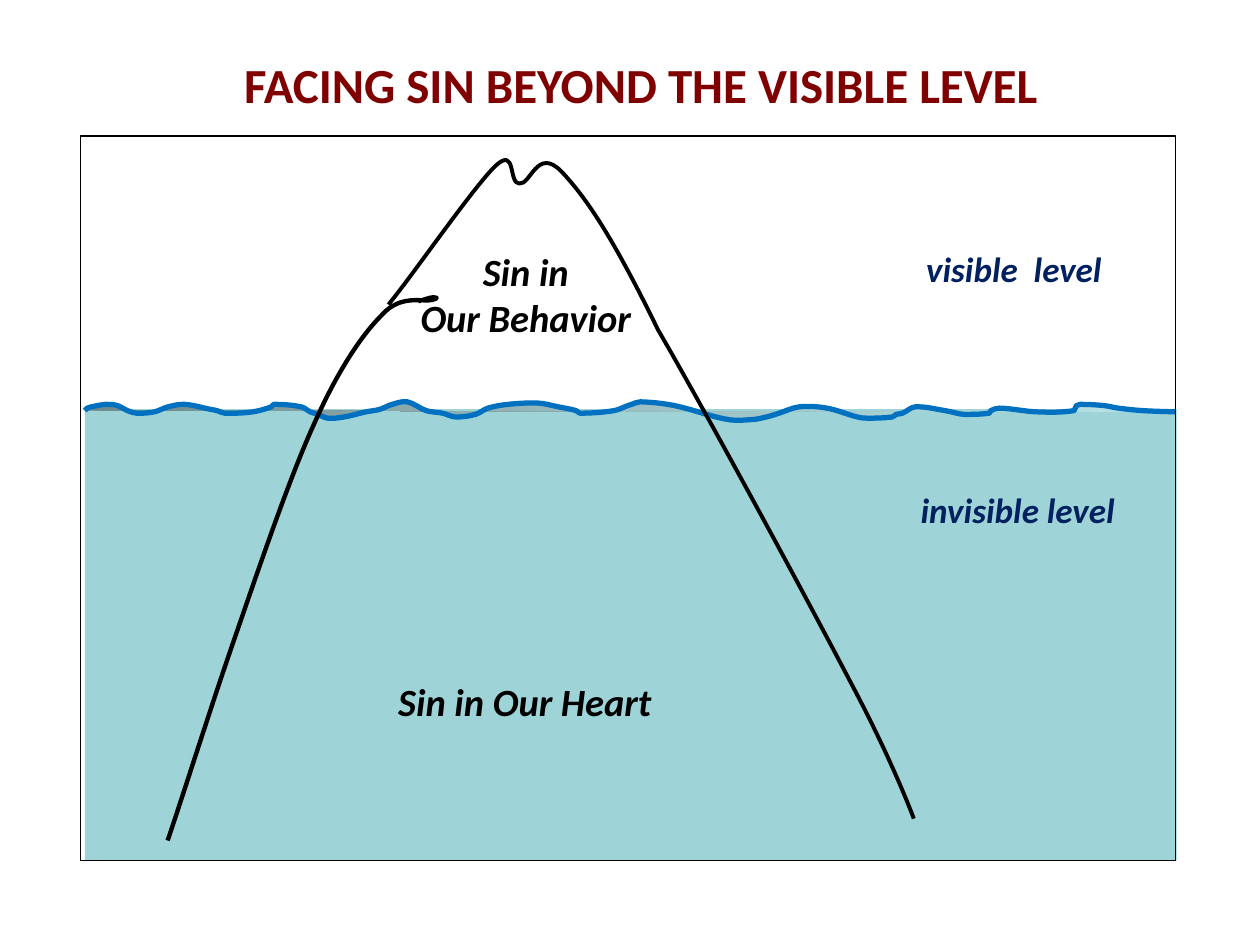
from copy import deepcopy

from pptx import Presentation
from pptx.dml.color import RGBColor
from pptx.enum.shapes import MSO_SHAPE
from pptx.enum.text import MSO_ANCHOR, PP_ALIGN
from pptx.oxml.ns import qn
from pptx.util import Cm, Pt

FONT = "Calibri"
MAROON = RGBColor(0x80, 0x00, 0x00)
NAVY = RGBColor(0x00, 0x20, 0x60)
BLACK = RGBColor(0x00, 0x00, 0x00)
WATER = RGBColor(0x9E, 0xD3, 0xD7)
WAVE_LINE = RGBColor(0x00, 0x70, 0xC0)
WAVE_STOPS = [RGBColor(0x6D, 0x86, 0x88), RGBColor(0x9B, 0xBF, 0xC2),
              RGBColor(0xB8, 0xE3, 0xE6)]

# Curve points are counted in hundredths of an inch
UNIT = Cm(2.54) / 100

WAVE_KNOTS = [
    (0, 9), (2, 7), (5, 6), (17, 4), (26, 5), (34, 9), (41, 11), (55, 10),
    (66, 6), (79, 4), (100, 8), (105, 9), (111, 11), (133, 10), (148, 6),
    (150, 4), (172, 6), (179, 10), (185, 12), (193, 15), (206, 14), (223, 10),
    (234, 8), (244, 4), (256, 2), (271, 9), (284, 11), (294, 14), (310, 12),
    (320, 7), (336, 4), (360, 3), (376, 6), (390, 9), (393, 11), (420, 9),
    (431, 5), (434, 4), (441, 2), (468, 5), (510, 16), (531, 16), (541, 14),
    (545, 13), (551, 11), (567, 6), (589, 7), (613, 14), (621, 15), (641, 14),
    (644, 12), (649, 11), (659, 6), (683, 9), (692, 11), (698, 12), (718, 11),
    (719, 9), (726, 7), (756, 10), (785, 9), (787, 5), (790, 4), (809, 5),
    (820, 7), (840, 9), (866, 10)]

# Bezier points: a start, then two handles and an end for each piece
LEFT_SLOPE = [
    (0, 434), (11, 402), (33, 332), (52, 277), (71, 222), (96, 148),
    (116, 104), (135, 61), (154, 33), (170, 17), (185, 0), (203, 7),
    (210, 5), (217, 3), (212, 3), (210, 3), (208, 3), (200, 6), (199, 6)]
PEAK_AND_RIGHT_SLOPE = [
    (0, 126), (17, 106), (68, 32), (85, 16), (102, 0), (95, 30), (104, 30),
    (113, 31), (118, 1), (137, 20), (155, 39), (176, 68), (214, 146),
    (253, 213), (333, 361), (367, 426), (401, 490), (417, 534), (417, 534)]


def smooth_points(knots):
    """Bezier points of a curve that runs left to right through the knots."""
    before = knots[:1] + knots[:-1]
    after = knots[1:] + knots[-1:]
    slopes = [(y2 - y1) / (x2 - x1) for (x1, y1), (x2, y2) in zip(before, after)]
    points = [knots[0]]
    for i in range(len(knots) - 1):
        (x1, y1), (x2, y2) = knots[i], knots[i + 1]
        third = (x2 - x1) / 3
        points += [(x1 + third, y1 + slopes[i] * third),
                   (x2 - third, y2 - slopes[i + 1] * third), (x2, y2)]
    return points


def add_curve(shapes, left, top, points, color, width):
    scaled = [(x * UNIT, y * UNIT) for x, y in points]
    builder = shapes.build_freeform(*scaled[0])
    builder.add_line_segments(scaled[1:], close=False)
    shape = builder.convert_to_shape(left, top)
    # Join each three line segments into one cubic piece
    segments = list(shape._element.iter(qn("a:lnTo")))
    for first, second, third in zip(*[iter(segments)] * 3):
        first.tag = qn("a:cubicBezTo")
        for segment in (second, third):
            first.append(segment[0])
            segment.getparent().remove(segment)
    shape.shadow.inherit = False
    shape.fill.background()
    shape.line.color.rgb = color
    shape.line.width = Pt(width)
    return shape


def add_rectangle(shapes, left, top, width, height):
    shape = shapes.add_shape(MSO_SHAPE.RECTANGLE, left, top, width, height)
    shape.shadow.inherit = False
    shape.fill.background()
    shape.line.fill.background()
    return shape


def format_run(run, size, color, italic):
    run.font.name = FONT
    run.font.size = Pt(size)
    run.font.bold = True
    run.font.italic = italic
    run.font.color.rgb = color


def add_label(shapes, box, lines, size, color, align, margin, indent):
    text_frame = shapes.add_textbox(*box).text_frame
    text_frame.word_wrap = True
    for i, line in enumerate(lines):
        paragraph = text_frame.add_paragraph() if i else text_frame.paragraphs[0]
        paragraph.alignment = align
        properties = paragraph._p.get_or_add_pPr()
        properties.set("marL", str(Cm(margin)))
        properties.set("indent", str(Cm(indent)))
        run = paragraph.add_run()
        run.text = line
        format_run(run, size, color, True)


def add_title(slide, left, top, width, height):
    title = slide.shapes.title
    title.left, title.top, title.width, title.height = left, top, width, height
    title.text_frame.vertical_anchor = MSO_ANCHOR.MIDDLE
    paragraph = title.text_frame.paragraphs[0]
    paragraph.alignment = PP_ALIGN.CENTER
    run = paragraph.add_run()
    run.text = "FACING SIN BEYOND THE VISIBLE LEVEL"
    format_run(run, 28, MAROON, False)


def add_sea(shapes, left, top):
    # Water body
    water = add_rectangle(shapes, left + Cm(0.08), top + Cm(5.51), Cm(22.01), Cm(9.1))
    water.fill.solid()
    water.fill.fore_color.rgb = WATER

    # Wavy surface with a three-stop gradient
    wave = add_curve(shapes, left + Cm(0.08), top + Cm(5.31),
                     smooth_points(WAVE_KNOTS), WAVE_LINE, 3)
    wave.fill.gradient()
    wave.fill.gradient_angle = 45
    stop_list = next(wave._element.iter(qn("a:gsLst")))
    stop_list.append(deepcopy(stop_list[0]))
    for i, (stop, color) in enumerate(zip(wave.fill.gradient_stops, WAVE_STOPS)):
        stop.position = i / 2
        stop.color.rgb = color


def add_labels(shapes, left, top):
    def box(x, y, width, height):
        return left + Cm(x), top + Cm(y), Cm(width), Cm(height)

    # Parts of the iceberg
    for place, lines in [(box(5.16, 2.13, 7.62, 2.11), ["Sin in", "Our Behavior"]),
                         (box(0.91, 10.8, 16.08, 2.34), ["Sin in Our Heart"])]:
        add_label(shapes, place, lines, 22, BLACK, PP_ALIGN.CENTER, 1.46, -1.46)

    # Levels above and below the surface
    for place, line, indent in [
            (box(15.52, 2.13, 5.72, 1.37), "visible  level", -1.47),
            (box(15.09, 6.99, 6.55, 2.06), "invisible level", -1.15)]:
        add_label(shapes, place, [line], 20, NAVY, PP_ALIGN.LEFT, 2.74, indent)


def add_iceberg(shapes, left, top):
    add_curve(shapes, left + Cm(1.75), top + Cm(3.18), LEFT_SLOPE, BLACK, 2.5)
    add_curve(shapes, left + Cm(6.2), top + Cm(0.2), PEAK_AND_RIGHT_SLOPE, BLACK, 2.25)


def add_diagram(slide, left, top, width, height):
    shapes = slide.shapes
    add_sea(shapes, left, top)
    add_labels(shapes, left, top)
    add_iceberg(shapes, left, top)
    # Frame
    frame = add_rectangle(shapes, left, top, width, height)
    frame.line.color.rgb = BLACK
    frame.line.width = Pt(0.75)


def main():
    presentation = Presentation()
    presentation.slide_width, presentation.slide_height = Cm(25.4), Cm(19.05)
    slide = presentation.slides.add_slide(presentation.slide_layouts[5])
    add_title(slide, Cm(1.27), Cm(0.84), Cm(23.29), Cm(1.7))
    add_diagram(slide, Cm(1.63), Cm(2.74), Cm(22.07), Cm(14.61))
    presentation.save("out.pptx")


if __name__ == "__main__":
    main()
